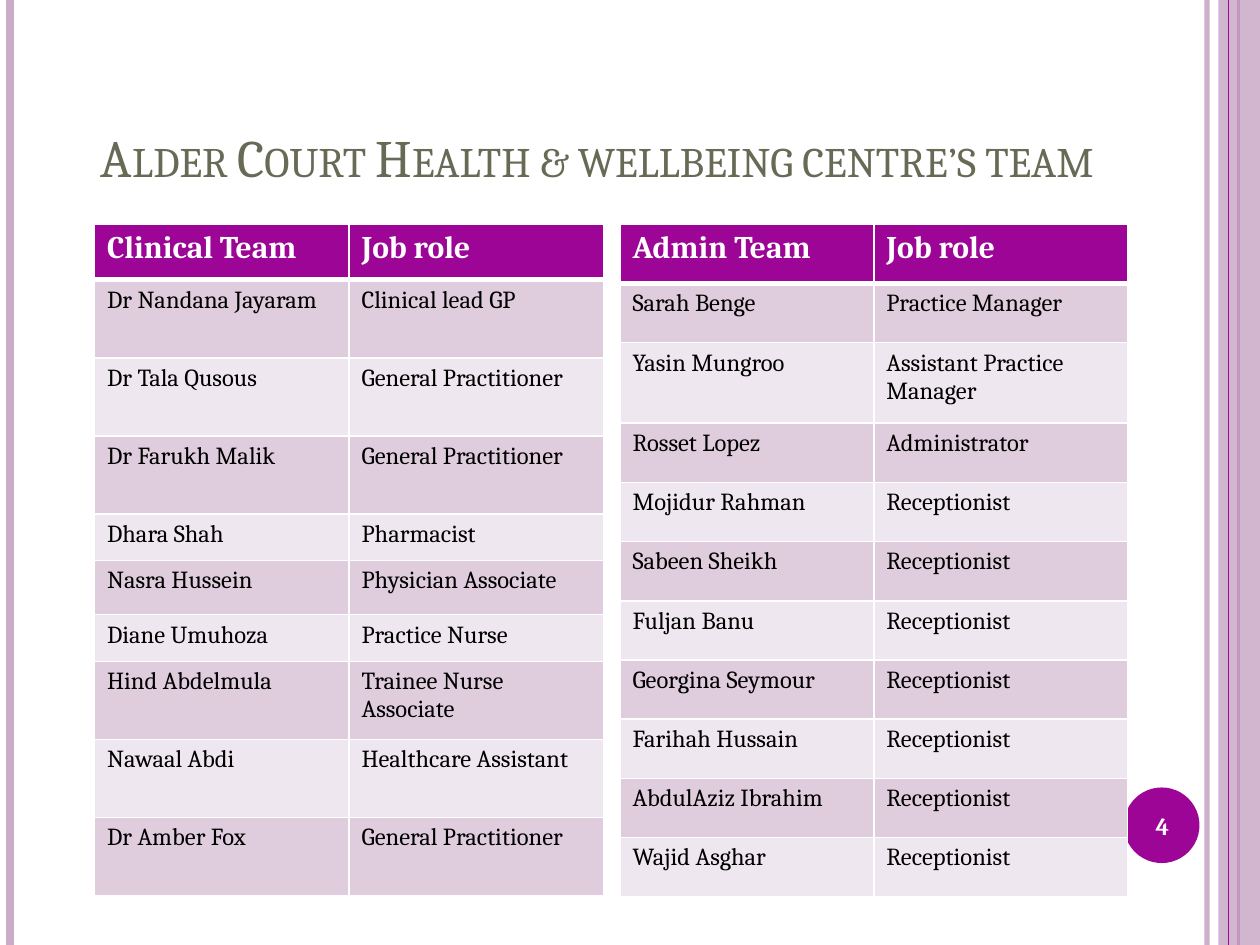
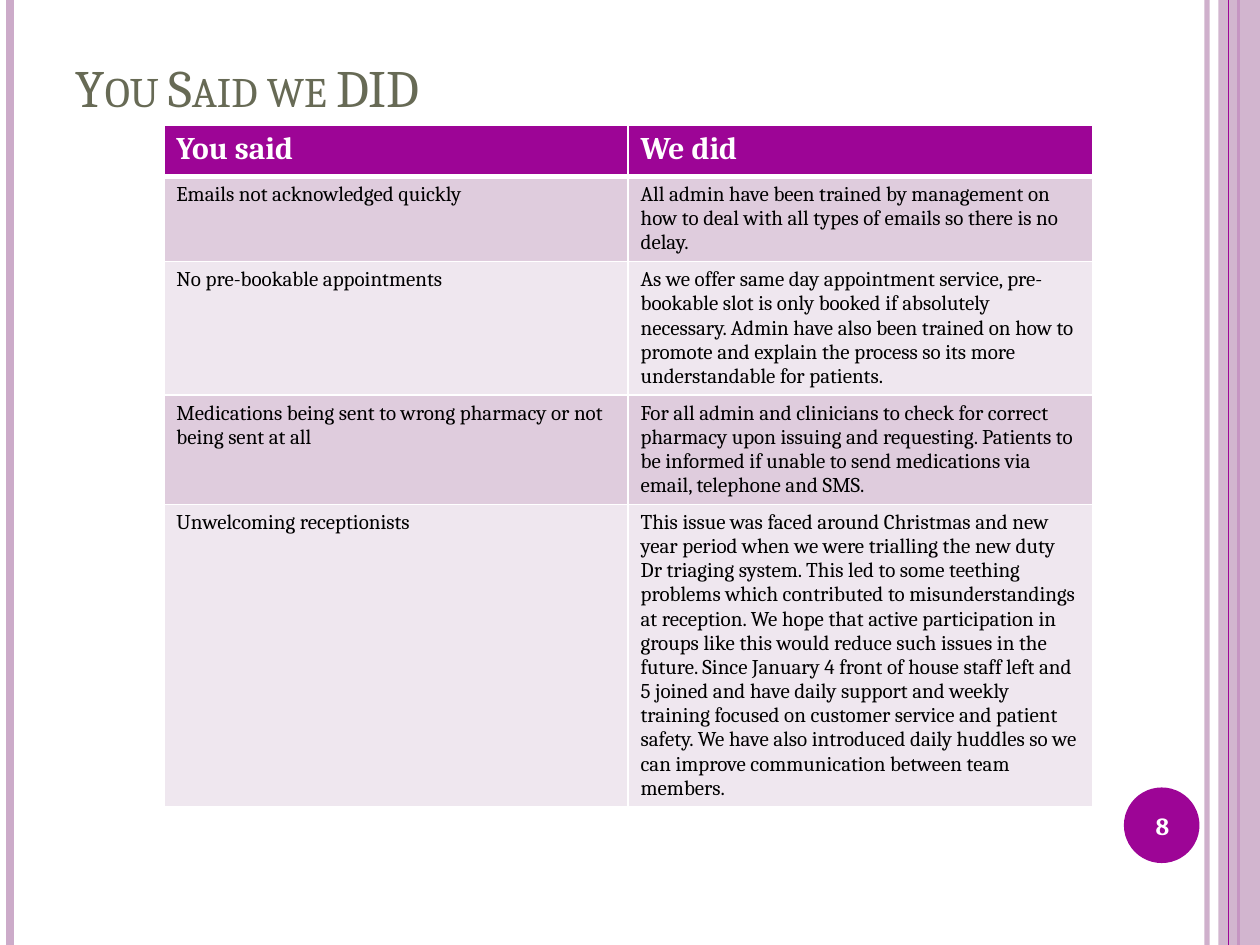
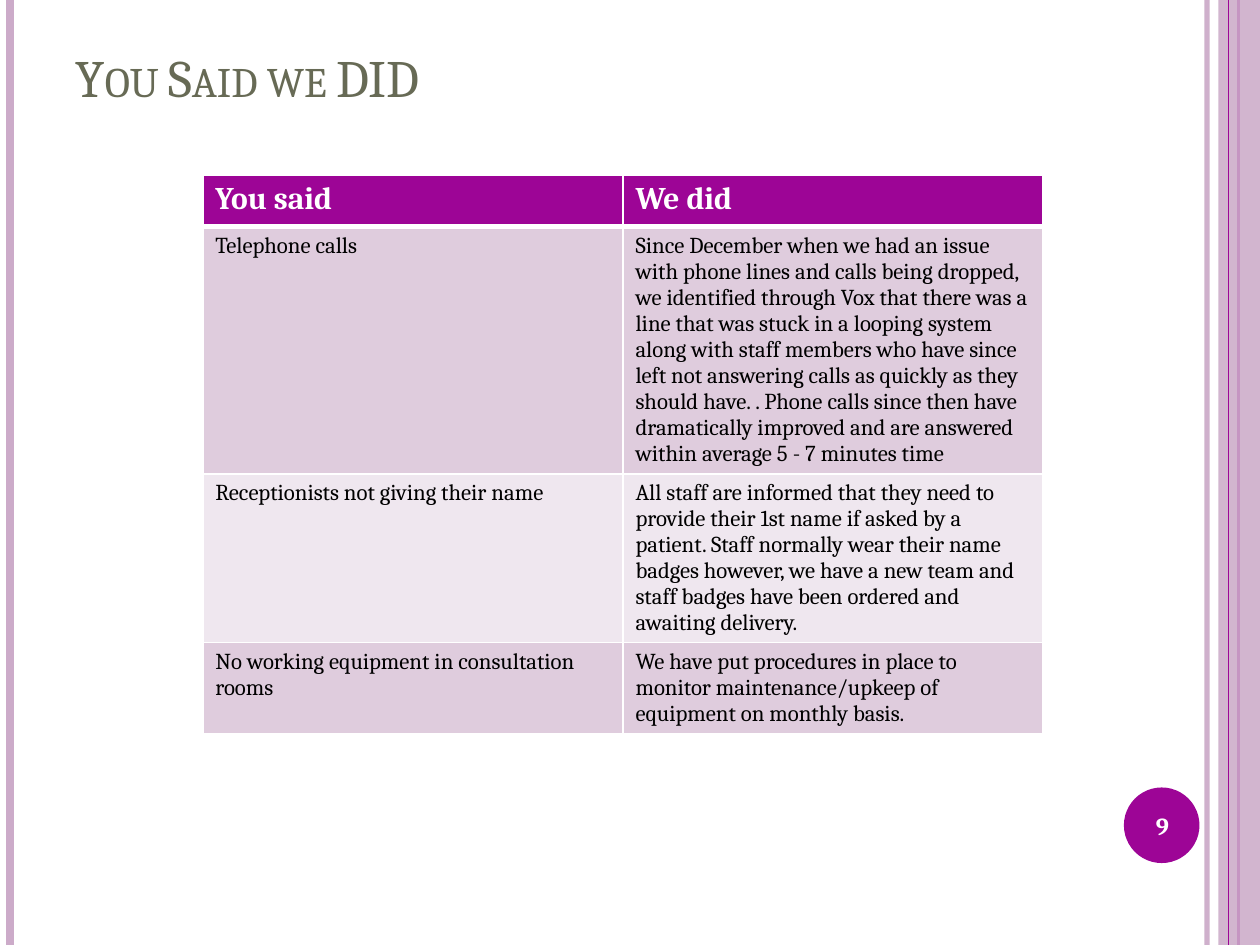
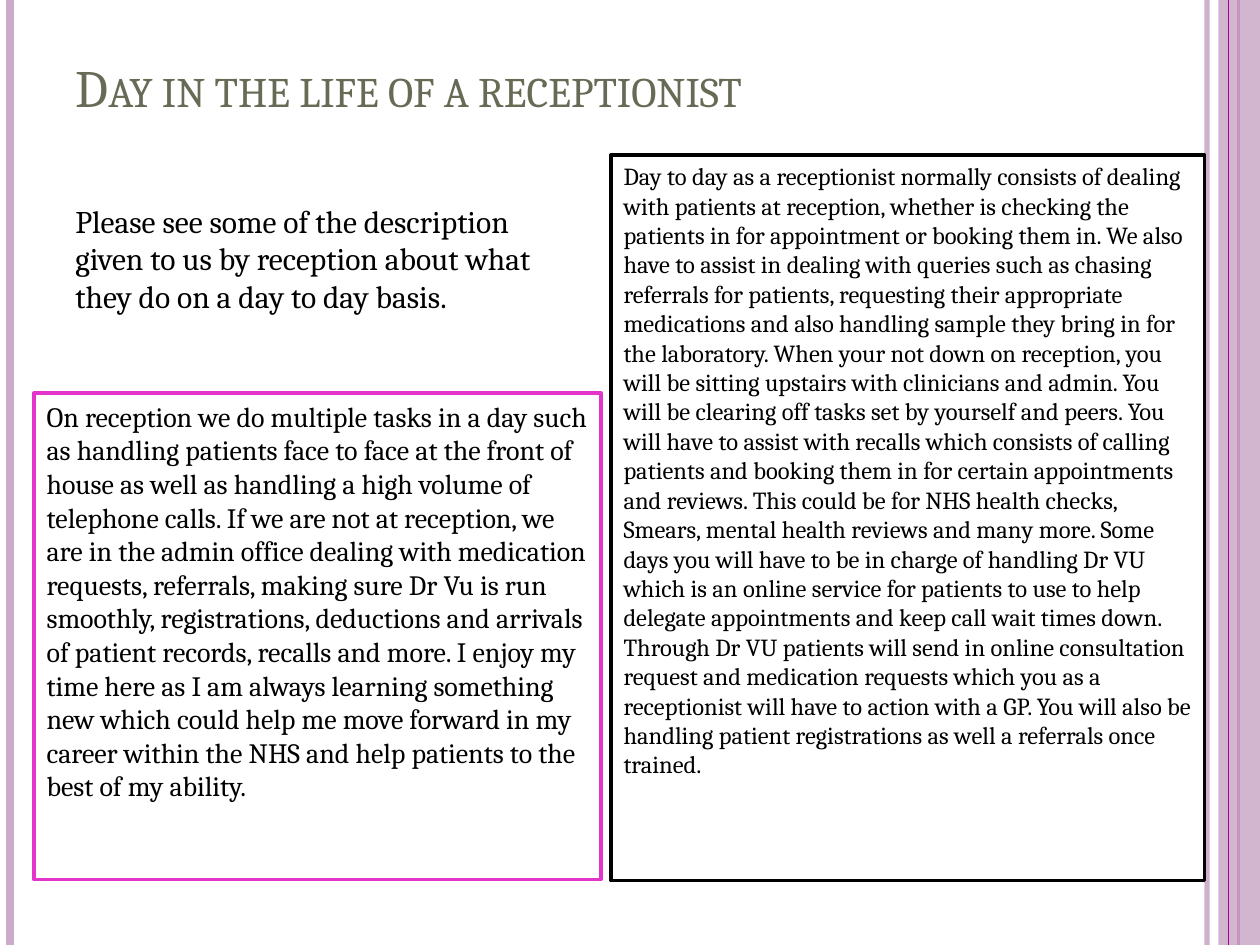
from dataclasses import dataclass

from pptx import Presentation
from pptx import util as u
from pptx.dml import color
from pptx.enum import shapes, text
from pptx.oxml import ns
from lxml import etree


@dataclass(frozen=True)
class Theme:
    font: str = "Cambria"
    accent: str = "9D0596"
    soft: str = "CCABC9"
    title: str = "676A55"
    pink: str = "E335CA"
    black: str = "000000"
    white: str = "FFFFFF"
    bands: tuple = ("DFCCDD", "EFE7EF")
    title_size: int = 30
    head_size: int = 18
    body_size: int = 14


T = Theme()
TITLE_ONLY, TITLE_BODY = 5, 1


# ---- Helpers ----
def rgb(value):
    return color.RGBColor.from_string(value)


def inches(box):
    return [u.Inches(v) for v in box]


def write(tf, words, size=T.body_size, ink=T.black, bold=False, caps=False,
          align=text.PP_ALIGN.LEFT, anchor=text.MSO_ANCHOR.TOP, before=0):
    """Fill a text frame with one formatted paragraph."""
    tf.word_wrap = True
    tf.auto_size = text.MSO_AUTO_SIZE.NONE
    tf.vertical_anchor = anchor
    p = tf.paragraphs[0]
    p.alignment = align
    p.space_before = u.Pt(before)
    r = p.add_run()
    r.text = words
    r.font.name, r.font.size, r.font.bold = T.font, u.Pt(size), bold
    r.font.color.rgb = rgb(ink)
    if caps:
        r.font._element.set("cap", "small")
    return p


def set_alpha(sp, percent):
    clr = next(sp._element.spPr.iter(ns.qn("a:srgbClr")))
    etree.SubElement(clr, ns.qn("a:alpha")).set("val", str(percent * 1000))


def outline(sp, ink, width):
    sp.fill.solid()
    sp.fill.fore_color.rgb = rgb(T.white)
    sp.line.color.rgb = rgb(ink)
    sp.line.width = u.Pt(width)


def add_block(slide, shape_type, box, fill):
    sp = slide.shapes.add_shape(shape_type, *inches(box))
    sp.shadow.inherit = False
    sp.fill.solid()
    sp.fill.fore_color.rgb = rgb(fill)
    sp.line.fill.background()
    return sp


def add_rule(slide, x, ink, width):
    line = slide.shapes.add_connector(
        shapes.MSO_CONNECTOR.STRAIGHT, *inches((x, 0, x, 7.5)))
    line.line.color.rgb = rgb(ink)
    line.line.width = u.Pt(width)
    etree.SubElement(line._element.spPr, ns.qn("a:effectLst"))
    return line


def move_to(target, parts):
    """Hand parts drawn on a slide over to a master or layout."""
    for number, sp in enumerate(parts, 100):
        next(sp._element.iter(ns.qn("p:cNvPr"))).set("id", str(number))
        target.shapes.element.append(sp._element)


# ---- Shared frame: side bands on the master, number disc on the layout ----
def build_frame(prs, slide):
    edge = add_rule(slide, 9.58, T.soft, 3)
    set_alpha(edge, 93)
    left = add_rule(slide, 0.08, T.soft, 4.5)
    inner = add_rule(slide, 9.83, T.accent, 1.5)
    band = add_block(slide, shapes.MSO_SHAPE.RECTANGLE, (9.67, 0, 0.33, 7.5), T.soft)
    set_alpha(band, 87)
    thin = add_rule(slide, 9.75, T.accent, 0.75)
    move_to(prs.slide_master, [edge, left, inner, band, thin])
    disc = add_block(slide, shapes.MSO_SHAPE.OVAL, (8.92, 6.25, 0.6, 0.6), T.accent)
    move_to(prs.slide_layouts[TITLE_ONLY], [disc])


def place(sp, box):
    sp.left, sp.top, sp.width, sp.height = inches(box)


def add_titled_slide(prs, layout, words, box):
    slide = prs.slides.add_slide(prs.slide_layouts[layout])
    place(slide.shapes.title, box)
    write(slide.shapes.title.text_frame, words, size=T.title_size, ink=T.title,
          caps=True, anchor=text.MSO_ANCHOR.BOTTOM)
    return slide


def add_number(slide, number):
    sp = slide.shapes.add_textbox(*inches((8.89, 6.27, 0.67, 0.57)))
    write(sp.text_frame, str(number), ink=T.white, bold=True,
          align=text.PP_ALIGN.CENTER, anchor=text.MSO_ANCHOR.MIDDLE)


# ---- Tables ----
def set_borders(cell, top, bottom):
    tc_pr = cell._tc.get_or_add_tcPr()
    sides = (("L", 1), ("R", 1), ("T", top), ("B", bottom))
    for i, (side, width) in enumerate(sides):
        ln = etree.Element(ns.qn(f"a:ln{side}"), w=str(u.Pt(width)))
        fill = etree.SubElement(ln, ns.qn("a:solidFill"))
        etree.SubElement(fill, ns.qn("a:srgbClr"), val=T.white)
        tc_pr.insert(i, ln)


def add_banded_table(slide, box, heights, rows, size=T.body_size):
    frame = slide.shapes.add_table(len(rows), 2, *inches(box))
    table = frame.table
    for r, (row, height) in enumerate(zip(rows, heights)):
        head = r == 0
        table.rows[r].height = u.Inches(height)
        for c, words in enumerate(row):
            cell = table.cell(r, c)
            cell.fill.solid()
            cell.fill.fore_color.rgb = rgb(T.accent if head else T.bands[(r - 1) % 2])
            set_borders(cell, top=3 if r == 1 else 1, bottom=3 if head else 1)
            write(cell.text_frame, words, size=T.head_size if head else size,
                  ink=T.white if head else T.black, bold=head)
    frame.height = u.Inches(box[3])


# ---- Slide types ----
def team_slide(prs):
    slide = add_titled_slide(prs, TITLE_ONLY, "Alder Court Health & wellbeing centre’s team",
                             (0.7, 0.29, 8.17, 1.25))
    build_frame(prs, slide)
    add_banded_table(slide, (0.75, 1.78, 4.04, 5.35),
                     [0.44] + [0.62] * 3 + [0.37, 0.43, 0.37] + [0.62] * 3, CLINICAL)
    add_banded_table(slide, (4.92, 1.78, 4.03, 5.35),
                     [0.47] * 2 + [0.64] + [0.47] * 8, ADMIN)
    add_number(slide, 4)


def feedback_slide(prs, number, title_height, box, heights, rows, size):
    slide = add_titled_slide(prs, TITLE_ONLY, "You Said we DID",
                             (0.5, 0.3, 8.17, title_height))
    add_banded_table(slide, box, heights, [("You said", "We did")] + rows, size)
    add_number(slide, number)


def receptionist_slide(prs):
    slide = add_titled_slide(prs, TITLE_BODY, "Day in the life of a receptionist",
                             (0.5, 0.3, 8.17, 0.69))
    # Framed description in the body placeholder, without a bullet
    body = slide.placeholders[1]
    place(body, (0.27, 3.12, 4.5, 3.86))
    outline(body, T.pink, 2)
    p = write(body.text_frame, TASKS, size=16, before=6)
    p_pr = p._p.get_or_add_pPr()
    p_pr.set("marL", "0")
    p_pr.set("indent", "0")
    etree.SubElement(p_pr, ns.qn("a:buNone"))
    # Second description and the introduction
    day = slide.shapes.add_textbox(*inches((4.85, 1.23, 4.71, 5.76)))
    outline(day, T.black, 2)
    write(day.text_frame, " ".join(DAY))
    intro = slide.shapes.add_textbox(*inches((0.5, 1.55, 4.19, 1.31)))
    write(intro.text_frame, INTRO, size=18)


# ---- Content ----
CLINICAL = [
    ("Clinical Team", "Job role"),
    ("Dr Nandana Jayaram", "Clinical lead GP"),
    ("Dr Tala Qusous", "General Practitioner"),
    ("Dr Farukh Malik", "General Practitioner"),
    ("Dhara Shah", "Pharmacist"),
    ("Nasra Hussein", "Physician Associate"),
    ("Diane Umuhoza", "Practice Nurse"),
    ("Hind Abdelmula", "Trainee Nurse Associate"),
    ("Nawaal Abdi", "Healthcare Assistant"),
    ("Dr Amber Fox", "General Practitioner"),
]
RECEPTIONISTS = ["Mojidur Rahman", "Sabeen Sheikh", "Fuljan Banu", "Georgina Seymour",
                 "Farihah Hussain", "AbdulAziz Ibrahim", "Wajid Asghar"]
ADMIN = [
    ("Admin Team", "Job role"),
    ("Sarah Benge", "Practice Manager"),
    ("Yasin Mungroo", "Assistant Practice Manager"),
    ("Rosset Lopez", "Administrator"),
] + [(name, "Receptionist") for name in RECEPTIONISTS]
ACCESS = [
    ("Emails not acknowledged quickly",
     "All admin have been trained by management on how to deal with all types of emails "
     "so there is no delay."),
    ("No pre-bookable appointments",
     "As we offer same day appointment service, pre-bookable slot is only booked if "
     "absolutely necessary. Admin have also been trained on how to promote and explain "
     "the process so its more understandable for patients."),
    ("Medications being sent to wrong pharmacy or not being sent at all",
     "For all admin and clinicians to check for correct pharmacy upon issuing and "
     "requesting. Patients to be informed if unable to send medications via email, "
     "telephone and SMS."),
    ("Unwelcoming receptionists",
     "This issue was faced around Christmas and new year period when we were trialling "
     "the new duty Dr triaging system. This led to some teething problems which "
     "contributed to misunderstandings at reception. We hope that active participation "
     "in groups like this would reduce such issues in the future. Since January 4 front "
     "of house staff left and 5 joined and have daily support and weekly training "
     "focused on customer service and patient safety. We have also introduced daily "
     "huddles so we can improve communication between team members."),
]
SERVICE = [
    ("Telephone calls",
     "Since December when we had an issue with phone lines and calls being dropped, we "
     "identified through Vox that there was a line that was stuck in a looping system "
     "along with staff members who have since left not answering calls as quickly as "
     "they should have. . Phone calls since then have dramatically improved and are "
     "answered within average 5 - 7 minutes time"),
    ("Receptionists not giving their name",
     "All staff are informed that they need to provide their 1st name if asked by a "
     "patient. Staff normally wear their name badges however, we have a new team and "
     "staff badges have been ordered and awaiting delivery."),
    ("No working equipment in consultation rooms",
     "We have put procedures in place to monitor maintenance/upkeep of equipment on "
     "monthly basis."),
]
INTRO = ("Please see some of the description given to us by reception about what they do "
         "on a day to day basis.")
TASKS = (
    "On reception we do multiple tasks in a day such as handling patients face to face at "
    "the front of house as well as handling a high volume of telephone calls. If we are "
    "not at reception, we are in the admin office dealing with medication requests, "
    "referrals, making sure Dr Vu is run smoothly, registrations, deductions and arrivals "
    "of patient records, recalls and more. I enjoy my time here as I am always learning "
    "something new which could help me move forward in my career within the NHS and help "
    "patients to the best of my ability.")
# Sentences of one paragraph
DAY = [
    "Day to day as a receptionist normally consists of dealing with patients at reception, "
    "whether is checking the patients in for appointment or booking them in.",
    "We also have to assist in dealing with queries such as chasing referrals for patients, "
    "requesting their appropriate medications and also handling sample they bring in for "
    "the laboratory.",
    "When your not down on reception, you will be sitting upstairs with clinicians and admin.",
    "You will be clearing off tasks set by yourself and peers.",
    "You will have to assist with recalls which consists of calling patients and booking "
    "them in for certain appointments and reviews.",
    "This could be for NHS health checks, Smears, mental health reviews and many more.",
    "Some days you will have to be in charge of handling Dr VU which is an online service "
    "for patients to use to help delegate appointments and keep call wait times down.",
    "Through Dr VU patients will send in online consultation request and medication "
    "requests which you as a receptionist will have to action with a GP.",
    "You will also be handling patient registrations as well a referrals once trained.",
]


def main():
    prs = Presentation()
    prs.slide_width, prs.slide_height = u.Inches(10), u.Inches(7.5)
    team_slide(prs)
    feedback_slide(prs, 8, 0.69, (1.3, 0.99, 7.37, 6.01), [0.41] * 5, ACCESS, 12)
    feedback_slide(prs, 9, 0.61, (1.61, 1.39, 6.67, 5.04),
                   [0.41, 0.41, 1.32, 0.41], SERVICE, 13)
    receptionist_slide(prs)
    prs.save("out.pptx")


if __name__ == "__main__":
    main()
